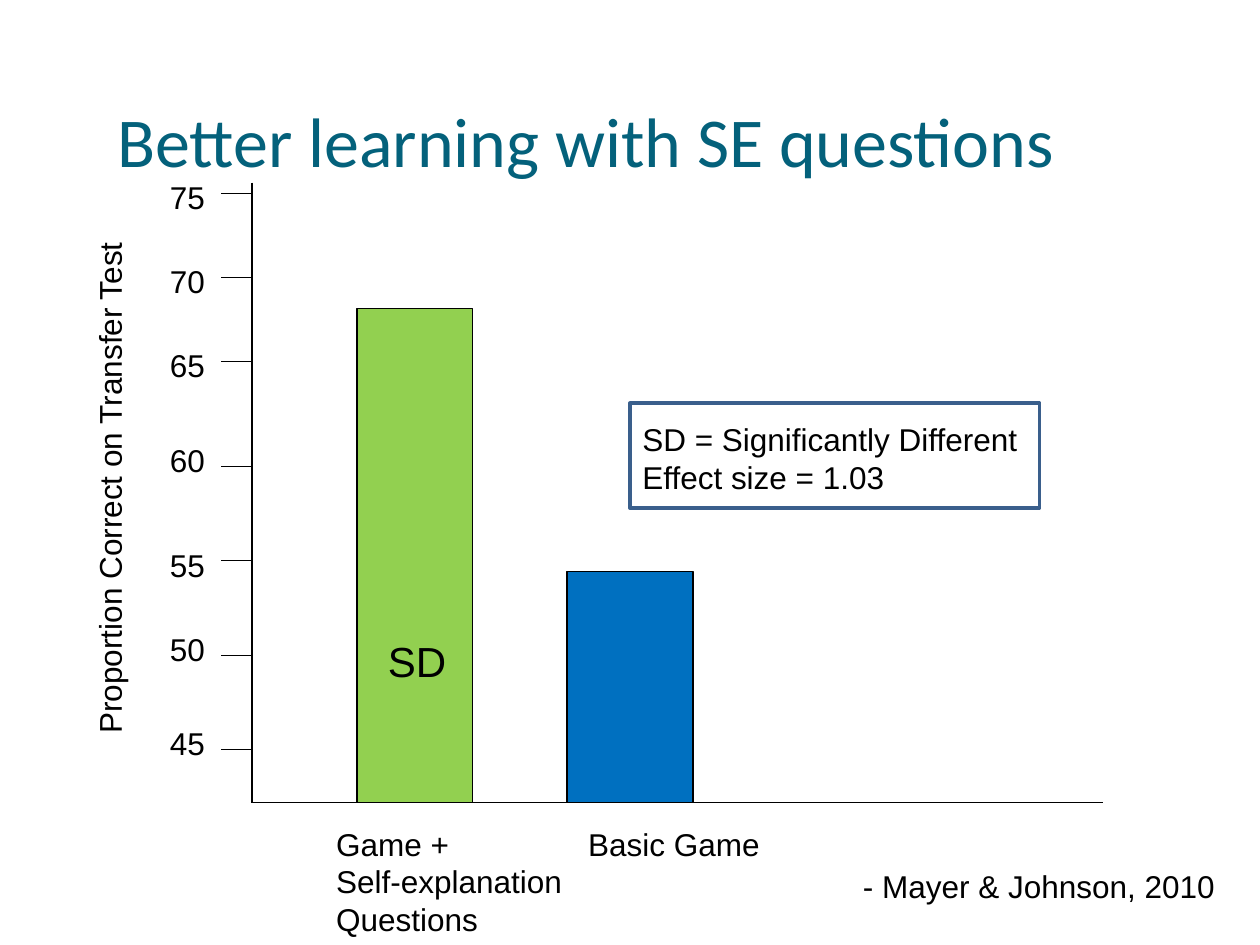
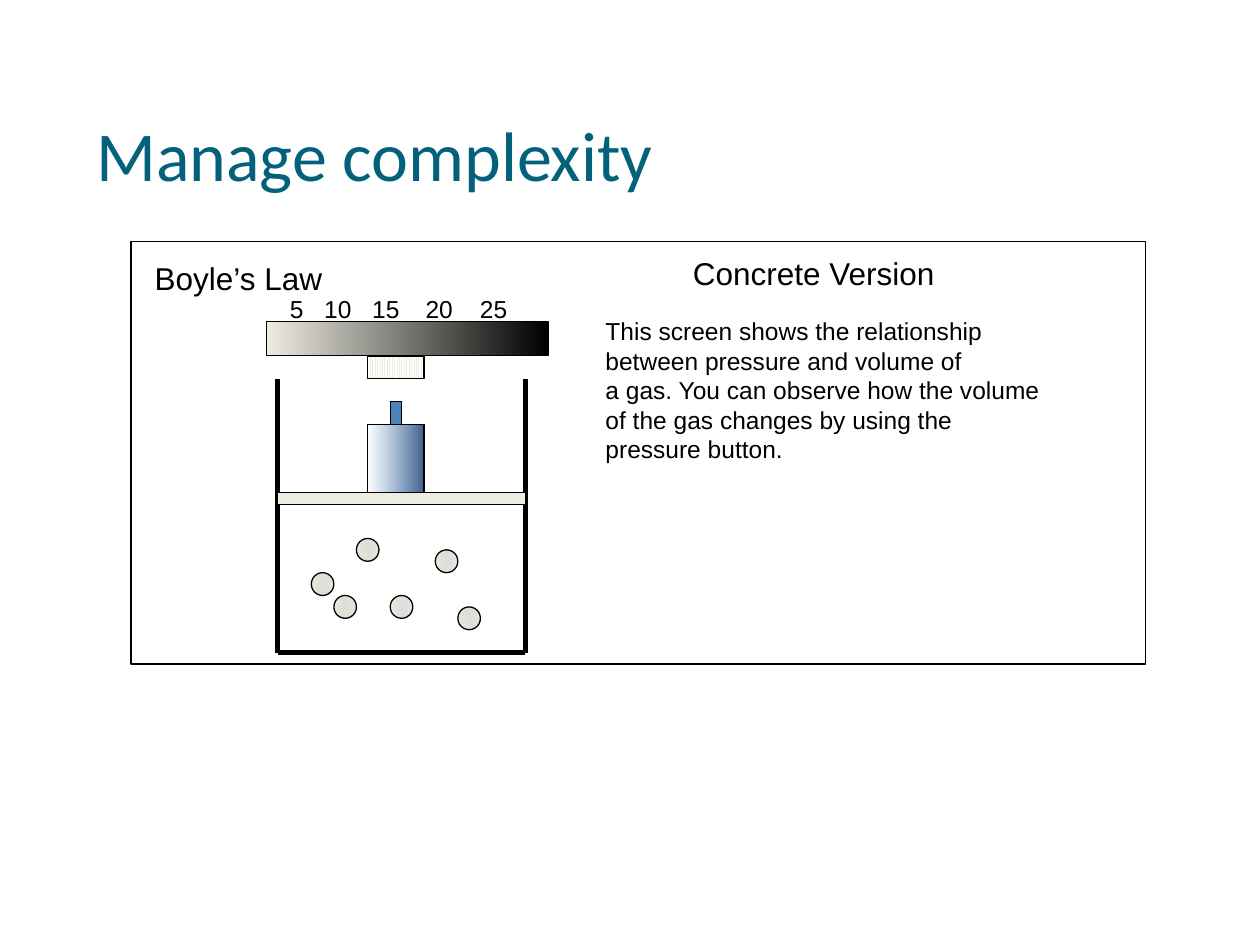
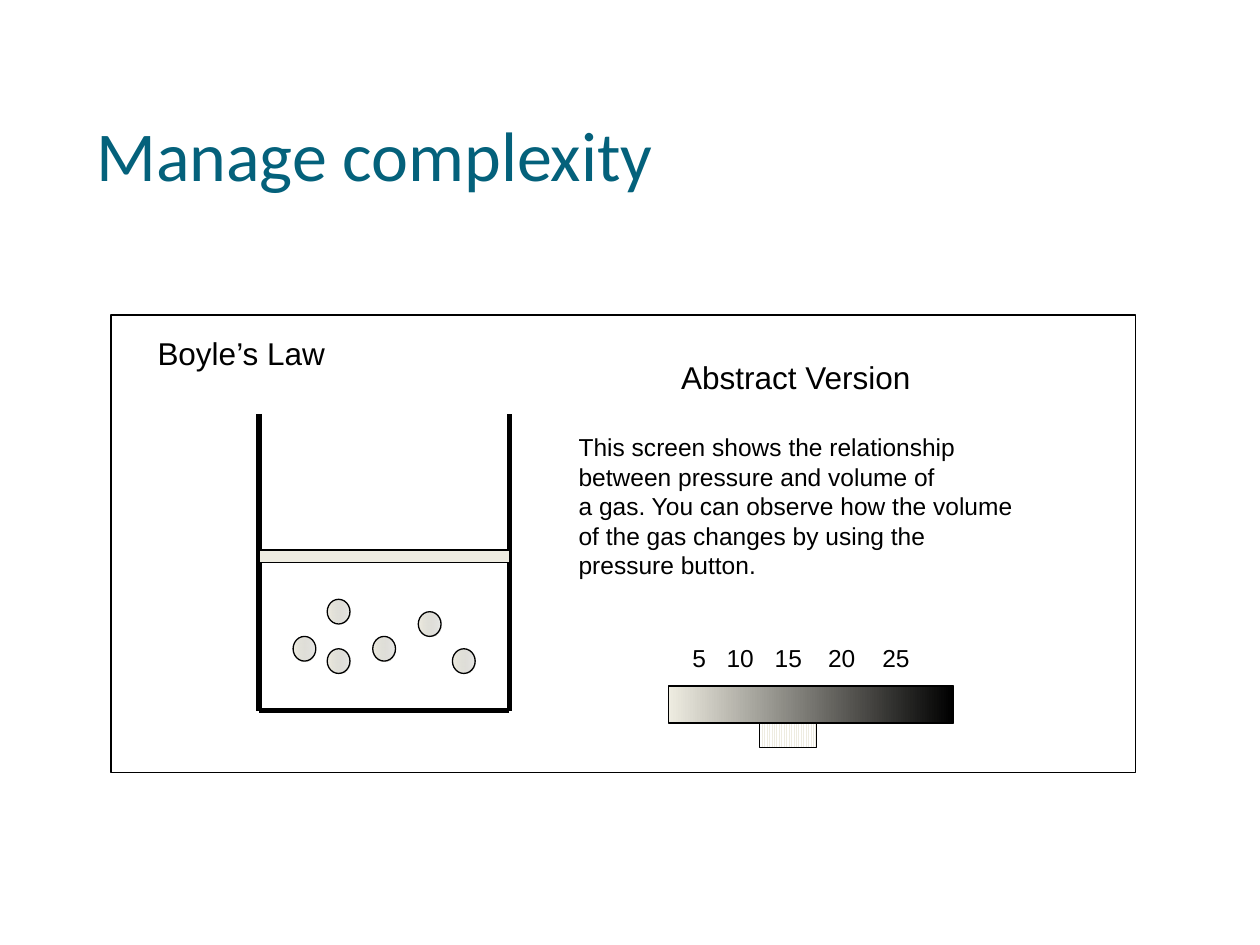
from lxml.etree import SubElement
from pptx import Presentation
from pptx.dml.color import RGBColor
from pptx.enum.dml import MSO_PATTERN
from pptx.enum.shapes import MSO_CONNECTOR, MSO_SHAPE
from pptx.enum.text import MSO_ANCHOR, MSO_AUTO_SIZE
from pptx.oxml.ns import qn
from pptx.util import Pt

# Colours
TEAL = RGBColor(0x04, 0x61, 0x7B)
BLACK = RGBColor(0x00, 0x00, 0x00)
WHITE = RGBColor(0xFF, 0xFF, 0xFF)
GREEN = RGBColor(0x92, 0xD0, 0x50)
BLUE = RGBColor(0x00, 0x70, 0xC0)
KEY_BLUE = RGBColor(0x3A, 0x5F, 0x8C)
STEEL = RGBColor(0x4F, 0x81, 0xBD)
DARK_STEEL = RGBColor(0x39, 0x5C, 0x87)
CREAM = RGBColor(0xEE, 0xEC, 0xE1)
GREY = RGBColor(0xAA, 0xA9, 0xA1)

# Text formats
TITLE = {"name": "Calibri", "size": Pt(40)}
LABEL = {"name": "Arial", "size": Pt(18)}
SMALL = {"name": "Arial", "size": Pt(14)}
LARGE = {"name": "Arial", "size": Pt(24)}

# Gradients as (colour, opacity in percent) from left to right
BALL = ((CREAM, 100), (GREY, 22))
WEIGHT = ((STEEL, 0), (DARK_STEEL, 100))
PRESSURE = ((CREAM, 100), (BLACK, 100))

EXPLANATION = (
    "This screen shows the relationship",
    "between pressure and volume of",
    "a gas. You can observe how the volume",
    "of the gas changes by using the",
    "pressure button.",
)


def add_text(slide, box, lines, font_format, color=BLACK, tabs=()):
    """Add a text box with one paragraph per line."""
    shape = slide.shapes.add_textbox(*map(Pt, box))
    frame = shape.text_frame
    frame.word_wrap = bool(tabs)
    frame.auto_size = MSO_AUTO_SIZE.SHAPE_TO_FIT_TEXT
    for index, line in enumerate(lines):
        paragraph = frame.add_paragraph() if index else frame.paragraphs[0]
        run = paragraph.add_run()
        run.text = line
        for attribute, value in font_format.items():
            setattr(run.font, attribute, value)
        run.font.color.rgb = color
        if tabs:
            tab_list = SubElement(paragraph._p.get_or_add_pPr(), qn("a:tabLst"))
            for position in tabs:
                SubElement(tab_list, qn("a:tab"), pos=str(Pt(position)), algn="l")
    return shape


def add_title(slide, box, text):
    shape = add_text(slide, box, [text], TITLE, TEAL)
    shape.text_frame.vertical_anchor = MSO_ANCHOR.MIDDLE


def add_box(slide, box, fill=None, kind=MSO_SHAPE.RECTANGLE, line=BLACK, width=0.75):
    """Add an outlined shape; fill is a colour, a gradient or None."""
    shape = slide.shapes.add_shape(kind, *map(Pt, box))
    shape.shadow.inherit = False
    shape.line.color.rgb = line
    shape.line.width = Pt(width)
    if fill is None:
        shape.fill.background()
    elif isinstance(fill, RGBColor):
        shape.fill.solid()
        shape.fill.fore_color.rgb = fill
    else:
        fill_gradient(shape, fill)
    return shape


def fill_gradient(shape, colors):
    shape.fill.gradient()
    shape.fill.gradient_angle = 0
    for stop, (color, _) in zip(shape.fill.gradient_stops, colors):
        stop.color.rgb = color
    for stop, (_, opacity) in zip(shape._element.iter(qn("a:gs")), colors):
        if opacity < 100:
            SubElement(stop[0], qn("a:alpha"), val=str(opacity * 1000))


def add_line(slide, start, end, width=0.75):
    line = slide.shapes.add_connector(MSO_CONNECTOR.STRAIGHT, *map(Pt, start + end))
    line.line.color.rgb = BLACK
    line.line.width = Pt(width)
    SubElement(line._element.spPr, qn("a:effectLst"))


def add_bar_plot(slide, box):
    """Draw the axes, ticks, bars and key of the learning results."""
    left, top, width, height = box
    bottom = top + height

    # Axes and ticks, as (value, tick offset, label offset)
    add_line(slide, (left, top), (left, bottom))
    add_line(slide, (left, bottom), (left + width, bottom))
    scale = ((75, 6, -6), (70, 54, 42), (65, 102, 90), (60, 162, 144),
             (55, 216, 204), (50, 270, 252), (45, 324, 306))
    for value, tick, label in scale:
        add_line(slide, (left, top + tick), (left - 18, top + tick))
        add_text(slide, (left - 54, top + label, 34.5, 29), [str(value)], LABEL)
    axis_title = add_text(slide, (left - 230.4, top + 158.4, 298, 29),
                          ["Proportion Correct on Transfer Test"], LABEL)
    axis_title.rotation = 270

    # Bars, as (offset, width, drop from the top, colour)
    for offset, bar_width, drop, color in ((60, 66, 72, GREEN), (180, 72, 222, BLUE)):
        add_box(slide, (left + offset, top + drop, bar_width, height - drop), color)
    add_text(slide, (left + 70.5, top + 255, 48, 36), ["SD"], LARGE)
    add_text(slide, (left + 41, bottom + 9, 260, 73),
             ["Game +\tBasic Game", "Self-explanation", "Questions"], LABEL, tabs=[144])

    # Key
    add_box(slide, (left + 216, top + 126, 234, 60), line=KEY_BLUE, width=2)
    add_text(slide, (left + 216, top + 132, 231, 51),
             ["SD = Significantly Different", "Effect size = 1.03"], LABEL)


def panel_grid(box, columns=90, rows=37):
    """Return a function that turns cells of the panel into points."""
    left, top, width, height = box
    cell_width, cell_height = width / columns, height / rows

    def place(column, row, across=0, down=0):
        return (left + column * cell_width, top + row * cell_height,
                across * cell_width, down * cell_height)
    return place


def add_vessel(slide, place, column, row, piston_row, balls):
    """Draw an open vessel of 22 by 24 cells with its piston and gas."""
    corners = [place(column + x, row + y)[:2]
               for x, y in ((0, 0), (0, 24), (22, 24), (22, 0))]
    for start, end in zip(corners, corners[1:]):
        add_line(slide, start, end, 3)
    add_box(slide, place(column, row + piston_row, 22, 1), CREAM)
    for x, y in balls:
        add_box(slide, place(column + x, row + y, 2, 2), BALL, MSO_SHAPE.OVAL)


def add_weight(slide, place, column, row):
    add_box(slide, place(column, row + 2, 5, 6), WEIGHT)
    add_box(slide, place(column + 2, row, 1, 2), STEEL)


def add_slider(slide, place, column, row, thumb, label_rise):
    """Draw the pressure bar, its numbers above and its thumb below."""
    add_box(slide, place(column, row, 25, 3), PRESSURE)
    add_text(slide, place(column + 1, row - label_rise, 23, 4),
             ["5\t10\t15\t20\t25"], SMALL, tabs=(19.5, 47, 77.5, 108.5))
    button = add_box(slide, place(column + thumb, row + 3, 5, 2), WHITE)
    button.fill.patterned()
    button.fill.pattern = MSO_PATTERN.LIGHT_VERTICAL
    button.fill.fore_color.rgb = CREAM
    button.fill.back_color.rgb = WHITE


def add_gas_panel(slide, box, version, cells):
    """Draw a lesson screen; cells holds the place of each part."""
    place = panel_grid(box)
    add_box(slide, box, WHITE)
    add_vessel(slide, place, *cells["vessel"])
    if "weight" in cells:
        add_weight(slide, place, *cells["weight"])
    add_text(slide, place(*cells["topic"], 18.5, 5), ["Boyle’s Law"], LABEL)
    add_text(slide, place(*cells["explanation"], 44, 15), EXPLANATION, SMALL)
    add_slider(slide, place, *cells["slider"])
    add_text(slide, place(*cells["version"], 25, 5), [version], LABEL)


CONCRETE = {
    "vessel": (13, 12, 10, ((3, 17), (5, 19), (7, 14), (14, 15), (10, 19), (16, 20))),
    "weight": (21, 14),
    "topic": (1, 1),
    "explanation": (41, 6),
    "slider": (12, 7, 9, 3),
    "version": (48.75, 0.5),
}
ABSTRACT = {
    "vessel": (13, 8, 11, ((3, 18), (6, 19), (6, 15), (14, 16), (10, 18), (17, 19))),
    "topic": (3, 1),
    "explanation": (40, 9),
    "slider": (49, 30, 8, 4),
    "version": (49, 3),
}


def main():
    presentation = Presentation()
    presentation.slide_width, presentation.slide_height = Pt(720), Pt(540)
    blank = presentation.slide_layouts[6]

    # Learning results
    slide = presentation.slides.add_slide(blank)
    add_bar_plot(slide, (144, 104.4, 486, 354.2))
    add_title(slide, (60, 54, 566, 52), "Better learning with SE questions")
    add_text(slide, (486, 492, 217.5, 29), ["- Mayer & Johnson, 2010"], LABEL)

    # Two versions of the gas lesson
    for version, box, cells in (
        ("Concrete Version", (74.9, 138.2, 579.6, 241.2), CONCRETE),
        ("Abstract Version", (63.4, 180, 585.4, 261.4), ABSTRACT),
    ):
        slide = presentation.slides.add_slide(blank)
        add_gas_panel(slide, box, version, cells)
        add_title(slide, (48, 62, 345, 52), "Manage complexity")

    presentation.save("out.pptx")


if __name__ == "__main__":
    main()
